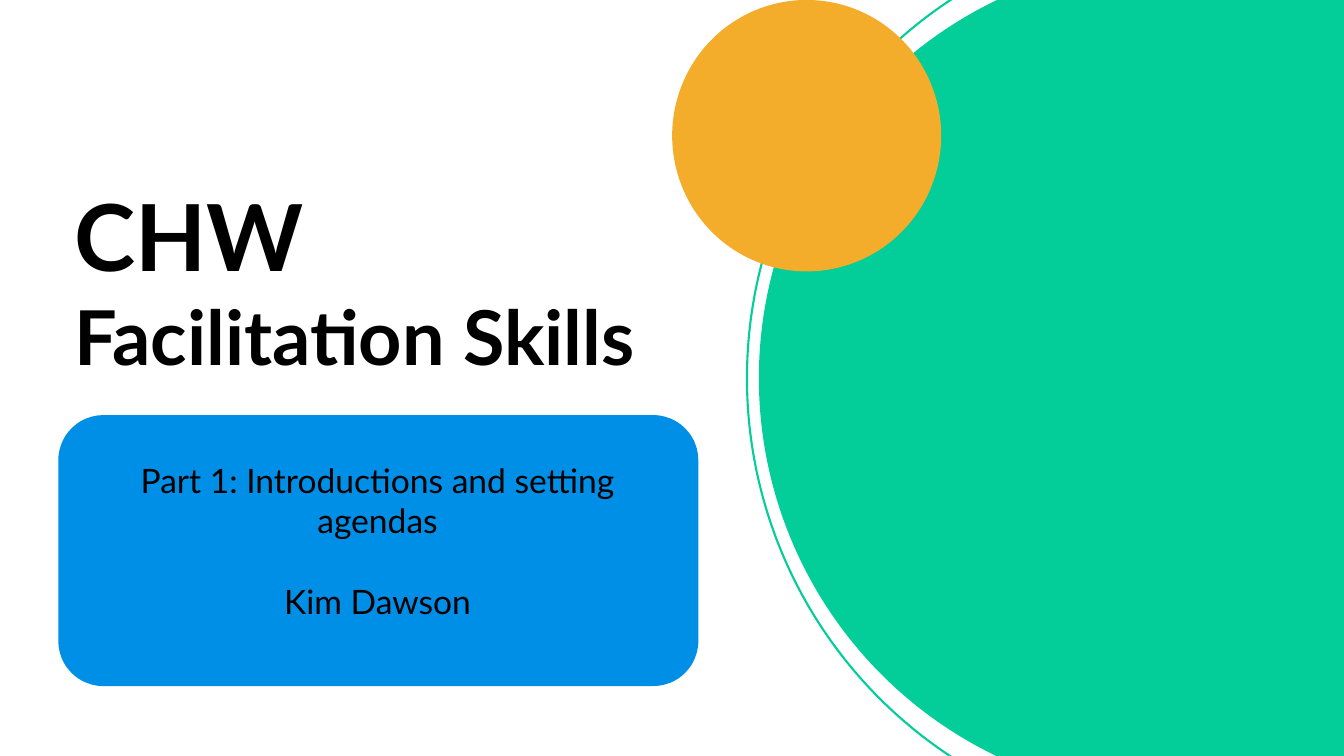
from pptx import Presentation
from pptx.dml.color import RGBColor
from pptx.enum.shapes import MSO_SHAPE
from pptx.enum.text import MSO_ANCHOR, PP_ALIGN
from pptx.util import Cm, Pt

ELLIPSE, ROUNDED = MSO_SHAPE.OVAL, MSO_SHAPE.ROUNDED_RECTANGLE
LEFT, CENTER = PP_ALIGN.LEFT, PP_ALIGN.CENTER
TOP = MSO_ANCHOR.TOP
TITLE_ONLY = 5

COLORS = {"text": "000000", "panel": "008FE7", "green": "03CD98", "orange": "F3AD2A"}
FONT = "Lato"
MIDDLE = 9.53  # vertical centre of the page, in cm


def color(name):
    return RGBColor.from_string(COLORS[name])


class CoverPage:
    """Holds the current slide and draws its elements in one style."""

    def __init__(self, deck):
        self.page = deck.slides.add_slide(deck.slide_layouts[TITLE_ONLY])

    def style_font(self, font, size=None, bold=False):
        font.name, font.bold = FONT, bold
        font.color.rgb = color("text")
        if size:
            font.size = Pt(size)

    def shape(self, kind, left, top, width, height, fill=None, line=None):
        shape = self.page.shapes.add_shape(
            kind, Cm(left), Cm(top), Cm(width), Cm(height))
        shape.shadow.inherit = False
        if fill:
            shape.fill.solid()
            shape.fill.fore_color.rgb = color(fill)
        else:
            shape.fill.background()
        if line:
            shape.line.color.rgb = color(line)
            shape.line.width = Pt(1.5)
        else:
            shape.line.fill.background()

    def circle(self, center_x, center_y, width, height, **style):
        self.shape(ELLIPSE, center_x - width / 2, center_y - height / 2,
                   width, height, **style)

    def title(self, left, top, width, height, lines):
        box = self.page.shapes.title
        box.left, box.top, box.width, box.height = map(Cm, (left, top, width, height))
        frame = box.text_frame
        frame.word_wrap, frame.vertical_anchor = True, TOP
        para = frame.paragraphs[0]
        para.alignment, para.line_spacing = LEFT, 1.0
        self.style_font(para.font, bold=True)
        for index, (text, size) in enumerate(lines):
            if index:
                para.add_line_break()
            span = para.add_run()
            span.text = text
            self.style_font(span.font, size, bold=True)

    def text(self, left, top, width, height, lines, size, gap):
        box = self.page.shapes.add_textbox(Cm(left), Cm(top), Cm(width), Cm(height))
        frame = box.text_frame
        frame.word_wrap = True
        for index, line in enumerate(lines):
            para = frame.add_paragraph() if index else frame.paragraphs[0]
            para.text, para.alignment = line, CENTER
            para.space_before = Pt(gap if index else 0)
            self.style_font(para.font, size)


def main():
    deck = Presentation()
    deck.slide_width, deck.slide_height = Cm(33.87), Cm(19.05)
    cover = CoverPage(deck)

    # Blue panel and large green circles
    cover.shape(ROUNDED, 1.47, 10.46, 16.13, 6.83, fill="panel")
    cover.circle(29.69, MIDDLE, 21.13, 21.13, fill="green")
    cover.circle(30.24, MIDDLE, 22.83, 22.83, line="green")

    # Title and subtitle
    cover.title(1.63, 4.39, 15.82, 5.38, [("CHW", 66), ("Facilitation Skills", 54)])
    cover.text(2.11, 11.46, 14.81, 4.37,
               ["Part 1: Introductions and setting agendas", "Kim Dawson"],
               size=24, gap=28.8)

    # Orange accent in front
    cover.circle(20.33, 3.42, 6.78, 6.84, fill="orange")
    deck.save("out.pptx")


if __name__ == "__main__":
    main()
